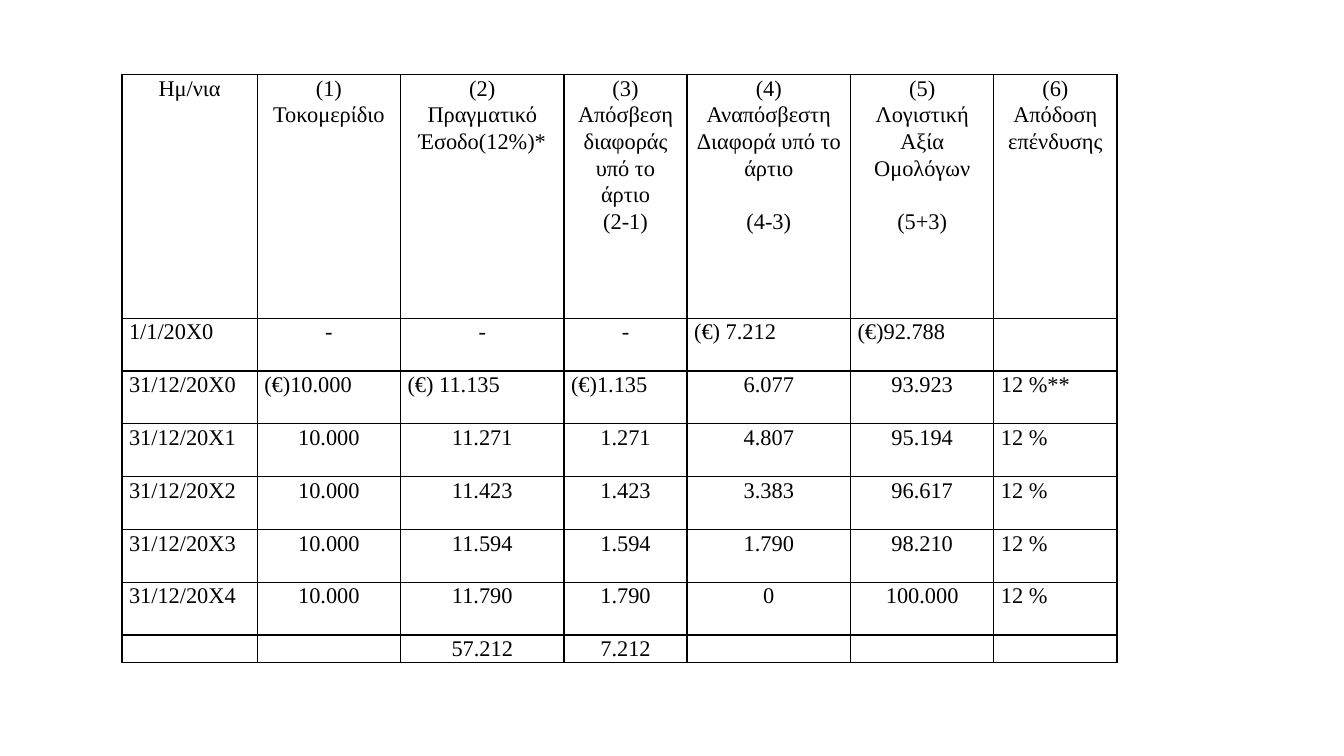
import pptx
import pptx.util
import pptx.dml.color
import pptx.enum.text
import pptx.oxml.ns
from lxml import etree

Inches = pptx.util.Inches
Pt = pptx.util.Pt
qn = pptx.oxml.ns.qn
ALIGN = pptx.enum.text.PP_ALIGN

FONT = "Times New Roman"
SIZE = 16
INK = "000000"
WIDTHS = [1.34, 1.42, 1.62, 1.22, 1.62, 1.42, 1.22]
HEIGHTS = [2.42] + [0.525] * 6 + [0.26]
HEADS = [
    ["Ημ/νια"],
    ["(1)", "Τοκομερίδιο"],
    ["(2)", "Πραγματικό", "Έσοδο(12%)*"],
    ["(3)", "Απόσβεση διαφοράς υπό το άρτιο", "(2-1)"],
    ["(4)", "Αναπόσβεστη", "Διαφορά υπό το άρτιο", "(4-3)"],
    ["(5)", "Λογιστική", "Αξία Ομολόγων", "(5+3)"],
    ["(6)", "Απόδοση επένδυσης"],
]
GAPS = {"(4-3)": 19, "(5+3)": 19}
BODY = [
    ["1/1/20Χ0", "-", "-", "-", "(€) 7.212", "(€)92.788", ""],
    ["31/12/20Χ0", "(€)10.000", "(€) 11.135", "(€)1.135", "6.077", "93.923", "12 %**"],
    ["31/12/20Χ1", "10.000", "11.271", "1.271", "4.807", "95.194", "12 %"],
    ["31/12/20Χ2", "10.000", "11.423", "1.423", "3.383", "96.617", "12 %"],
    ["31/12/20Χ3", "10.000", "11.594", "1.594", "1.790", "98.210", "12 %"],
    ["31/12/20Χ4", "10.000", "11.790", "1.790", "0", "100.000", "12 %"],
    ["", "", "57.212", "7.212", "", "", ""],
]


def color(code):
    return pptx.dml.color.RGBColor.from_string(code)


def write(para, text, align=ALIGN.CENTER, size=SIZE, font=FONT, ink=INK, gap=0):
    para.alignment = align
    para.line_spacing = 1.07
    if gap:
        para.space_before = Pt(gap)
    if text:
        run = para.add_run()
        run.text = text
        run.font.size = Pt(size)
        run.font.name = font
        run.font.color.rgb = color(ink)
    else:
        etree.SubElement(para._p, qn("a:endParaRPr"), sz=str(size * 100))


def border(cell, ink=INK, width=1):
    props = cell._tc.get_or_add_tcPr()
    for side in ("lnL", "lnR", "lnT", "lnB"):
        line = etree.SubElement(props, qn("a:" + side), w=str(Pt(width)))
        fill = etree.SubElement(line, qn("a:solidFill"))
        etree.SubElement(fill, qn("a:srgbClr"), val=ink)


def fill_cell(cell, lines, align):
    border(cell)
    cell.fill.background()
    cell.margin_left = cell.margin_right = Inches(0.07)
    cell.margin_top = cell.margin_bottom = 0
    frame = cell.text_frame
    for i, text in enumerate(lines):
        para = frame.add_paragraph() if i else frame.paragraphs[0]
        write(para, text, align=align, gap=GAPS.get(text, 0))


def pick_align(text, col):
    if col == 0:
        return ALIGN.JUSTIFY
    if "€" in text or "%" in text:
        return ALIGN.LEFT
    return ALIGN.CENTER


def bond_table(slide, left, top, width, height):
    frame = slide.shapes.add_table(
        len(HEIGHTS), len(WIDTHS),
        Inches(left), Inches(top), Inches(width), Inches(height),
    )
    table = frame.table
    table.first_row = table.horz_banding = False
    for col, size in zip(table.columns, WIDTHS):
        col.width = Inches(size * width / sum(WIDTHS))
    for row, size in zip(table.rows, HEIGHTS):
        row.height = Inches(size * height / sum(HEIGHTS))
    for c, lines in enumerate(HEADS):
        fill_cell(table.cell(0, c), lines, ALIGN.CENTER)
    for r, values in enumerate(BODY, 1):
        for c, text in enumerate(values):
            fill_cell(table.cell(r, c), [text], pick_align(text, c))


def main():
    deck = pptx.Presentation()
    deck.slide_width = Inches(13.33)
    deck.slide_height = Inches(7.5)
    slide = deck.slides.add_slide(deck.slide_layouts[6])
    bond_table(slide, 1.21, 0.74, 9.87, 5.82)
    deck.save("out.pptx")


if __name__ == "__main__":
    main()
